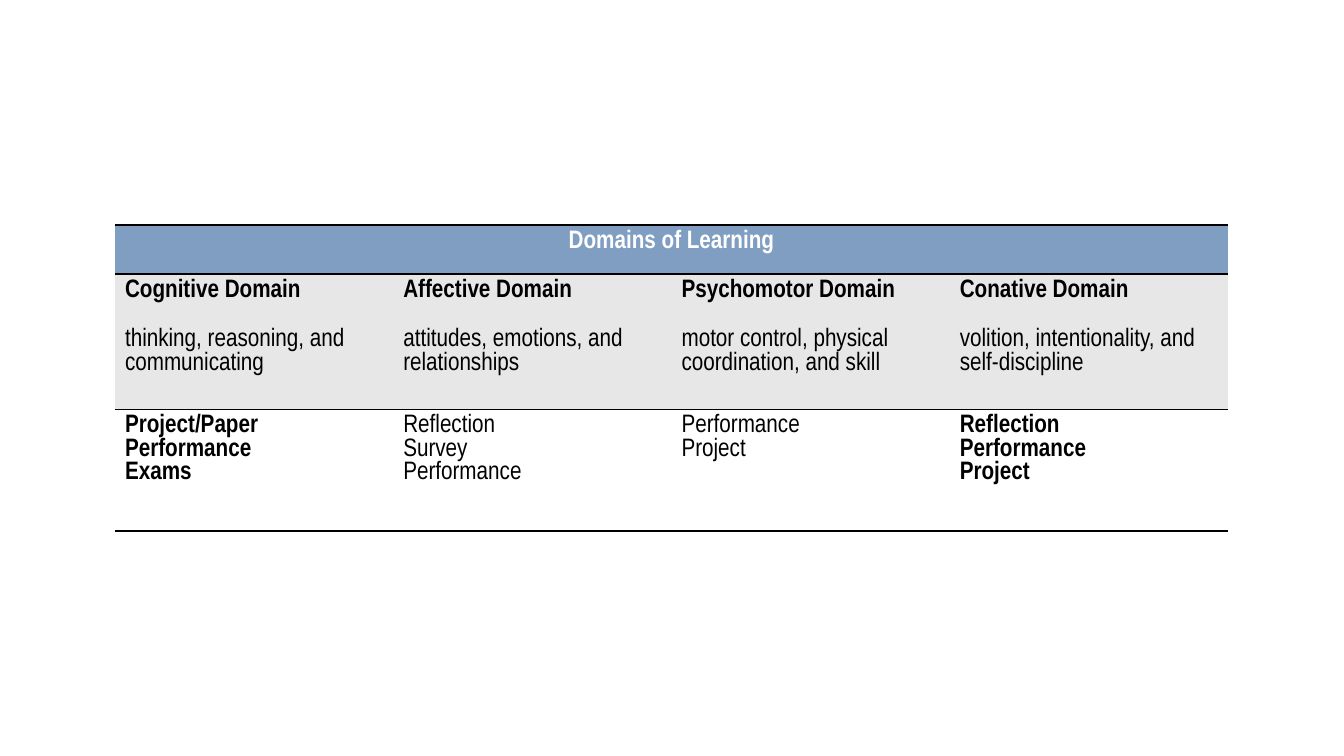
from dataclasses import dataclass

from lxml import etree
from pptx import Presentation
from pptx.dml.color import RGBColor
from pptx.enum.text import PP_ALIGN
from pptx.oxml.ns import qn
from pptx.util import Inches, Pt

CENTER, LEFT = PP_ALIGN.CENTER, PP_ALIGN.LEFT


@dataclass
class Theme:
    font: str = "Arial Narrow"
    size: int = 18
    header: str = "809EC2"
    band: str = "E7E7E7"
    white: str = "FFFFFF"
    black: str = "000000"


theme = Theme()

TITLE = "Domains of Learning"
DOMAINS = [
    ("Cognitive Domain", "thinking, reasoning, and communicating",
     "Project/Paper\nPerformance\nExams"),
    ("Affective Domain", "attitudes, emotions, and relationships",
     "Reflection\nSurvey\nPerformance"),
    ("Psychomotor Domain", "motor control, physical coordination, and skill",
     "Performance\nProject"),
    ("Conative Domain", "volition, intentionality, and self-discipline",
     "Reflection\nPerformance\nProject"),
]
ROW_HEIGHTS = [0.49, 0.49, 0.85, 1.21]
COLUMN_WIDTH = 2.76

# Fill, text colour, bold columns and border widths in points for each row
ROW_STYLES = [
    {"fill": theme.header, "color": theme.white, "bold": {0}, "borders": {"T": 2, "B": 2}},
    {"fill": theme.band, "color": theme.black, "bold": {0, 1, 2, 3}, "borders": {"T": 2}},
    {"fill": theme.band, "color": theme.black, "bold": set(), "borders": {"B": 1}},
    {"fill": theme.white, "color": theme.black, "bold": {0, 3}, "borders": {"T": 1, "B": 2}},
]


def set_borders(cell, widths):
    """Draw the given sides in black and leave the others without a line."""
    properties = cell._tc.get_or_add_tcPr()
    for position, side in enumerate("LRTB"):
        line = etree.Element(qn(f"a:ln{side}"))
        if side in widths:
            line.set("w", str(Pt(widths[side])))
            fill = etree.SubElement(line, qn("a:solidFill"))
            etree.SubElement(fill, qn("a:srgbClr"), val=theme.black)
        else:
            etree.SubElement(line, qn("a:noFill"))
        properties.insert(position, line)


# Slide
presentation = Presentation()
presentation.slide_width = Inches(13.33)
presentation.slide_height = Inches(7.5)
slide = presentation.slides.add_slide(presentation.slide_layouts[6])

# Table grid
table = slide.shapes.add_table(
    len(ROW_HEIGHTS), len(DOMAINS), Inches(1.14), Inches(2.23),
    Inches(COLUMN_WIDTH * len(DOMAINS)), Inches(sum(ROW_HEIGHTS))).table
table.horz_banding = False
for column in table.columns:
    column.width = Inches(COLUMN_WIDTH)
for row, height in zip(table.rows, ROW_HEIGHTS):
    row.height = Inches(height)
table.cell(0, 0).merge(table.cell(0, len(DOMAINS) - 1))

# Header text, then one column per domain
table.cell(0, 0).text = TITLE
for column_index, domain in enumerate(DOMAINS):
    for row_index, text in enumerate(domain, start=1):
        table.cell(row_index, column_index).text = text

# Cell formats
for row_index, style in enumerate(ROW_STYLES):
    for column_index in range(len(DOMAINS)):
        cell = table.cell(row_index, column_index)
        cell.fill.solid()
        cell.fill.fore_color.rgb = RGBColor.from_string(style["fill"])
        set_borders(cell, style["borders"])
        font_format = {"name": theme.font, "size": Pt(theme.size),
                       "bold": column_index in style["bold"]}
        for paragraph in cell.text_frame.paragraphs:
            paragraph.alignment = CENTER if row_index == 0 else LEFT
            for run in paragraph.runs:
                for name, value in font_format.items():
                    setattr(run.font, name, value)
                run.font.color.rgb = RGBColor.from_string(style["color"])

presentation.save("out.pptx")
